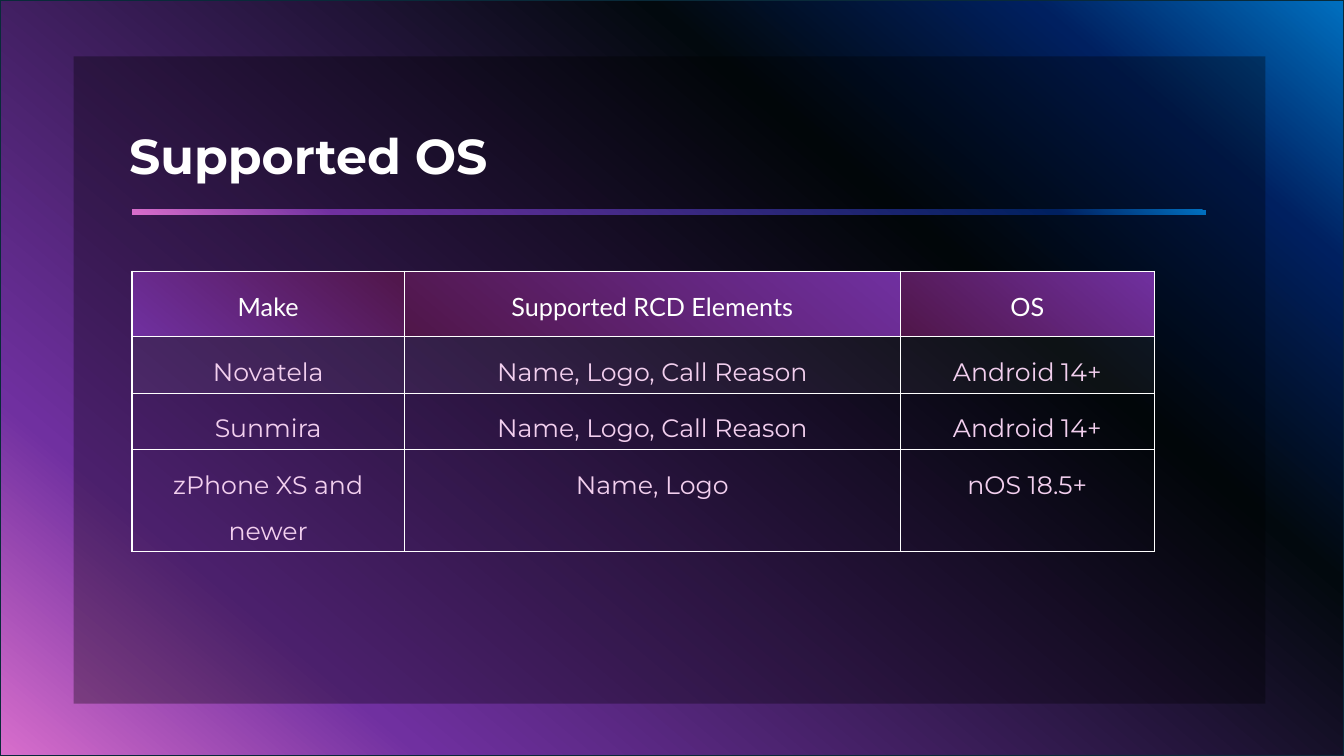
from dataclasses import dataclass

import pptx
import pptx.util
import pptx.dml.color
import pptx.enum.shapes
import pptx.enum.text
import pptx.oxml
import pptx.oxml.ns
from pptx.util import Inches


@dataclass(frozen=True)
class Theme:
    """Colours, fonts and type sizes of the slide."""
    white: str = "FFFFFF"
    black: str = "000000"
    edge: str = "092A39"
    body: str = "F2CFEE"
    backdrop: tuple = ((0, "0070C0"), (14, "002060"), (31, "02090E"), (81, "7030A0"), (100, "D86ECC"))
    rule: tuple = ((0, "0070C0"), (14, "002060"), (81, "7030A0"), (100, "D86ECC"))
    header: tuple = ((0, "7030A0"), (100, "501649"))
    header_first: tuple = ((0, "501649"), (100, "7030A0"))
    angle: int = 130
    title_font: str = "Montserrat"
    header_font: str = "Lato"
    title_size: int = 35
    table_size: int = 18


THEME = Theme()
LEFT = 1.31
COLUMNS = (2.7, 4.92, 2.52)
ROWS = (0.65, 0.56, 0.56, 0.56)
SUPPORT = (
    ("Make", "Supported RCD Elements", "OS"),
    ("Novatela", "Name, Logo, Call Reason", "Android 14+"),
    ("Sunmira", "Name, Logo, Call Reason", "Android 14+"),
    ("zPhone XS and newer", "Name, Logo", "nOS 18.5+"),
)


def rgb(color):
    """Turn a hex string into a colour."""
    return pptx.dml.color.RGBColor.from_string(color)


def xml(tag, inner, attributes=""):
    """Build one drawing element."""
    ns = pptx.oxml.ns.nsdecls("a")
    return pptx.oxml.parse_xml(f"<a:{tag} {ns} {attributes}>{inner}</a:{tag}>")


def fill_gradient(fill, properties, stops):
    """Fill with a slanted gradient through the given stops."""
    fill.gradient()
    fill.gradient_angle = 360 - THEME.angle
    old = properties.find(".//" + pptx.oxml.ns.qn("a:gsLst"))
    inner = "".join(f'<a:gs pos="{pos * 1000}"><a:srgbClr val="{c}"/></a:gs>' for pos, c in stops)
    old.getparent().replace(old, xml("gsLst", inner))


def fill_sheer(fill, properties, color, opacity):
    """Fill with a partly transparent colour."""
    fill.solid()
    fill.fore_color.rgb = rgb(color)
    clr = properties.find(pptx.oxml.ns.qn("a:solidFill"))[0]
    clr.append(xml("alpha", "", f'val="{opacity * 1000}"'))


def add_rect(s, left, top, width, height):
    """Add a plain rectangle without line or shadow."""
    sp = s.shapes.add_shape(pptx.enum.shapes.MSO_SHAPE.RECTANGLE,
                            Inches(left), Inches(top), Inches(width), Inches(height))
    sp.shadow.inherit = False
    sp.line.fill.background()
    return sp


def format_run(r, font, size, color, bold=False):
    """Set the font of a run."""
    r.font.name = font
    r.font.size = pptx.util.Pt(size)
    r.font.color.rgb = rgb(color)
    r.font.bold = bold


def add_title(s, text):
    """Place the title above the panel."""
    sp = s.shapes.title
    s.shapes._spTree.append(sp._element)
    sp.left, sp.top, sp.width, sp.height = Inches(1.18), Inches(1.19), Inches(10.65), Inches(0.69)
    tf = sp.text_frame
    tf.text = text
    tf.vertical_anchor = pptx.enum.text.MSO_ANCHOR.TOP
    p = tf.paragraphs[0]
    p.alignment = pptx.enum.text.PP_ALIGN.LEFT
    format_run(p.runs[0], THEME.title_font, THEME.title_size, THEME.white, True)


def add_borders(cell):
    """Draw a thin white line on each side of a cell."""
    inner = f'<a:solidFill><a:srgbClr val="{THEME.white}"/></a:solidFill>'
    for i, side in enumerate("LRTB"):
        cell._tc.get_or_add_tcPr().insert(i, xml("ln" + side, inner, 'w="12700"'))


def fill_cell(cell, row, column):
    """Fill a cell according to its place in the table."""
    properties = cell._tc.get_or_add_tcPr()
    if row == 0:
        stops = THEME.header if column else THEME.header_first
        fill_gradient(cell.fill, properties, stops)
    elif row == 1:
        fill_sheer(cell.fill, properties, THEME.white, 5)
    else:
        cell.fill.background()


def add_support_table(s):
    """Add the table of supported systems."""
    table = s.shapes.add_table(len(ROWS), len(COLUMNS), Inches(LEFT), Inches(2.69),
                               Inches(sum(COLUMNS)), Inches(sum(ROWS))).table
    for column, width in zip(table.columns, COLUMNS):
        column.width = Inches(width)
    for i, (height, texts) in enumerate(zip(ROWS, SUPPORT)):
        table.rows[i].height = Inches(height)
        font, color = (THEME.title_font, THEME.body) if i else (THEME.header_font, THEME.white)
        for j, text in enumerate(texts):
            cell = table.cell(i, j)
            cell.text_frame.text = text
            p = cell.text_frame.paragraphs[0]
            p.alignment = pptx.enum.text.PP_ALIGN.CENTER
            p.line_spacing = 1.5
            format_run(p.runs[0], font, THEME.table_size, color)
            fill_cell(cell, i, j)
            add_borders(cell)


def main():
    """Build and save the slide."""
    prs = pptx.Presentation()
    prs.slide_width, prs.slide_height = Inches(13.33), Inches(7.5)
    s = prs.slides.add_slide(prs.slide_layouts[5])
    backdrop = add_rect(s, 0, 0, 13.33, 7.5)
    fill_gradient(backdrop.fill, backdrop._element.spPr, THEME.backdrop)
    backdrop.line.color.rgb = rgb(THEME.edge)
    backdrop.line.width = pptx.util.Pt(1.5)
    panel = add_rect(s, 0.73, 0.56, 11.82, 6.42)
    fill_sheer(panel.fill, panel._element.spPr, THEME.black, 32)
    add_title(s, "Supported OS")
    rule = add_rect(s, LEFT, 2.08, 10.65, 0.05)
    fill_gradient(rule.fill, rule._element.spPr, THEME.rule)
    add_support_table(s)
    prs.save("out.pptx")


if __name__ == "__main__":
    main()
